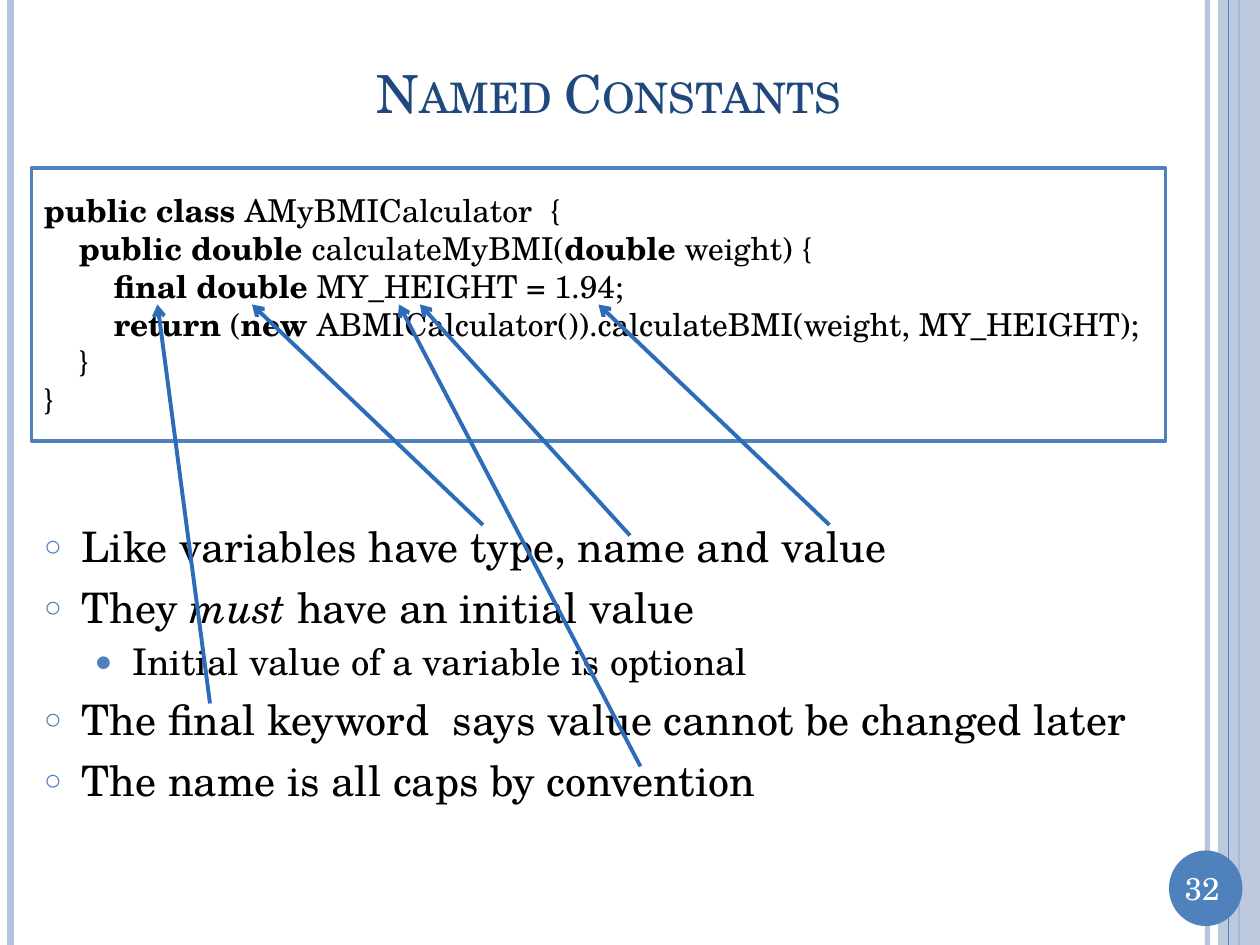
from lxml.etree import SubElement
from pptx import Presentation
from pptx.dml.color import RGBColor
from pptx.enum.shapes import MSO_CONNECTOR, MSO_SHAPE
from pptx.enum.text import MSO_ANCHOR, MSO_AUTO_SIZE, PP_ALIGN
from pptx.oxml.ns import qn
from pptx.util import Pt

FONT = "TeX Gyre Schola"
BLUE, PALE, NAVY, ARROW = "4F81BD", "B3C1DB", "1F497D", "2C6CB9"
BLACK, WHITE = "000000", "FFFFFF"
WIDTH, HEIGHT = 720, 540
INDENT = 21.6


def color(value):
    """Turn a hex string into a colour."""
    return RGBColor.from_string(value)


class SlideBuilder:
    """Hold the style and the current slide, and draw each kind of element."""

    def __init__(self, slide):
        """Keep the slide to draw on."""
        self.slide = slide

    def place(self, shape, box):
        """Move and size a shape."""
        shape.left, shape.top, shape.width, shape.height = map(Pt, box)

    def opacity(self, fill_parent, percent):
        """Make the solid colour of an element partly transparent."""
        solid = fill_parent.find(".//" + qn("a:srgbClr"))
        SubElement(solid, qn("a:alpha"), val=str(percent * 1000))

    def run(self, paragraph, text, size, hex_color, bold=False, italic=False):
        """Add one formatted run."""
        run = paragraph.add_run()
        run.text = text
        font = run.font
        font.name, font.size, font.bold, font.italic = FONT, Pt(size), bold, italic
        font.color.rgb = color(hex_color)
        return run

    def paragraphs(self, frame, count):
        """Return the given number of paragraphs in a text frame."""
        return [frame.paragraphs[0]] + [frame.add_paragraph() for _ in range(count - 1)]

    def line(self, start, end, hex_color, width, arrow=False, opacity=100):
        """Draw a straight line, with an arrowhead at its end if asked."""
        connector = self.slide.shapes.add_connector(
            MSO_CONNECTOR.STRAIGHT, *map(Pt, (*start, *end)))
        connector.line.color.rgb = color(hex_color)
        connector.line.width = Pt(width)
        properties = connector._element.spPr
        if opacity < 100:
            self.opacity(properties, opacity)
        if arrow:
            SubElement(properties.find(qn("a:ln")), qn("a:tailEnd"), type="arrow")
        SubElement(properties, qn("a:effectLst"))

    def shape(self, kind, box, fill, line=None, opacity=100):
        """Draw a filled preset shape."""
        shape = self.slide.shapes.add_shape(kind, *map(Pt, box))
        shape.shadow.inherit = False
        shape.fill.solid()
        shape.fill.fore_color.rgb = color(fill)
        if opacity < 100:
            self.opacity(shape._element.spPr, opacity)
        if line:
            shape.line.color.rgb = color(line)
            shape.line.width = Pt(2)
        else:
            shape.line.fill.background()
        return shape

    def label(self, box, text):
        """Write a centred white label."""
        frame = self.slide.shapes.add_textbox(*map(Pt, box)).text_frame
        frame.word_wrap = True
        paragraph = frame.paragraphs[0]
        paragraph.alignment = PP_ALIGN.CENTER
        self.run(paragraph, text, 18, WHITE)

    def title(self, box, text):
        """Fill the title placeholder in small capitals."""
        title = self.slide.shapes.title
        self.place(title, box)
        title.text_frame.vertical_anchor = MSO_ANCHOR.MIDDLE
        title.text_frame.auto_size = MSO_AUTO_SIZE.NONE
        paragraph = title.text_frame.paragraphs[0]
        paragraph.alignment = PP_ALIGN.CENTER
        run = self.run(paragraph, text, 30, NAVY)
        run.font._element.set("cap", "small")

    def code(self, box, lines):
        """Draw a box of code with indented lines and bold keywords."""
        frame = self.shape(MSO_SHAPE.RECTANGLE, box, WHITE, BLUE).text_frame
        frame.word_wrap = True
        frame.vertical_anchor = MSO_ANCHOR.MIDDLE
        for paragraph, (depth, parts) in zip(self.paragraphs(frame, len(lines)), lines):
            paragraph.alignment = PP_ALIGN.LEFT
            paragraph._p.get_or_add_pPr().set("marL", str(Pt(20 * depth)))
            for text, bold in parts:
                self.run(paragraph, text, 18, BLACK, bold=bold)

    def bullets(self, box, items):
        """Fill the body placeholder with a two-level list."""
        body = self.slide.placeholders[1]
        self.place(body, box)
        frame = body.text_frame
        frame.auto_size = MSO_AUTO_SIZE.NONE
        styles = [(24, 6, "○", 70, INDENT), (21, 4, "●", 80, 50.4)]
        for paragraph, (level, parts) in zip(self.paragraphs(frame, len(items)), items):
            size, space, mark, mark_size, margin = styles[level]
            paragraph.level = level
            paragraph.space_before = Pt(space)
            properties = paragraph._p.get_or_add_pPr()
            properties.set("marL", str(Pt(margin)))
            properties.set("indent", str(Pt(-INDENT)))
            mark_color = SubElement(properties, qn("a:buClr"))
            SubElement(mark_color, qn("a:srgbClr"), val=BLUE)
            SubElement(properties, qn("a:buSzPct"), val=str(mark_size * 1000))
            SubElement(properties, qn("a:buChar"), char=mark)
            for text, italic in parts:
                self.run(paragraph, text, size, BLACK, italic=italic)


def main():
    """Build the slide and save it."""
    presentation = Presentation()
    presentation.slide_width, presentation.slide_height = Pt(WIDTH), Pt(HEIGHT)
    builder = SlideBuilder(presentation.slides.add_slide(presentation.slide_layouts[1]))

    for x, hex_color, width, opacity in [(690, PALE, 3, 93), (6, PALE, 4.5, 100),
                                         (708, BLUE, 1.5, 100)]:
        builder.line((x, 0), (x, HEIGHT), hex_color, width, opacity=opacity)
    builder.shape(MSO_SHAPE.RECTANGLE, (696, 0, 24, HEIGHT), PALE, opacity=87)
    builder.line((702, 0), (702, HEIGHT), BLUE, 0.75)
    builder.shape(MSO_SHAPE.OVAL, (668, 486, 42, 43.2), BLUE)
    builder.label((666, 493, 42, 29), "32")

    builder.title((36, 21.6, 624, 62.4), "Named Constants")
    builder.code((18, 96, 648, 156), [
        (0, [("public class ", True), ("AMyBMICalculator  {", False)]),
        (1, [("public double ", True), ("calculateMyBMI(", False),
             ("double", True), (" weight) {", False)]),
        (2, [("final double", True), (" MY_HEIGHT = 1.94;", False)]),
        (2, [("return", True), (" (", False), ("new ", True),
             ("ABMICalculator()).calculateBMI(weight, MY_HEIGHT);", False)]),
        (1, [("}", False)]),
        (0, [("}", False)]),
    ])
    builder.bullets((18, 294, 642, 216), [
        (0, [("Like variables have type, name and value", False)]),
        (0, [("They ", False), ("must", True), (" have an initial value", False)]),
        (1, [("Initial value of a variable is optional", False)]),
        (0, [("The final keyword  says value cannot be changed later", False)]),
        (0, [("The name is all caps by convention", False)]),
    ])
    for start, target in [((276, 300), 144), ((360, 306), 240), ((474, 300), 342),
                          ((120, 402), 90), ((366, 438), 228)]:
        builder.line(start, (target, 174), ARROW, 2.25, arrow=True)

    presentation.save("out.pptx")


if __name__ == "__main__":
    main()
